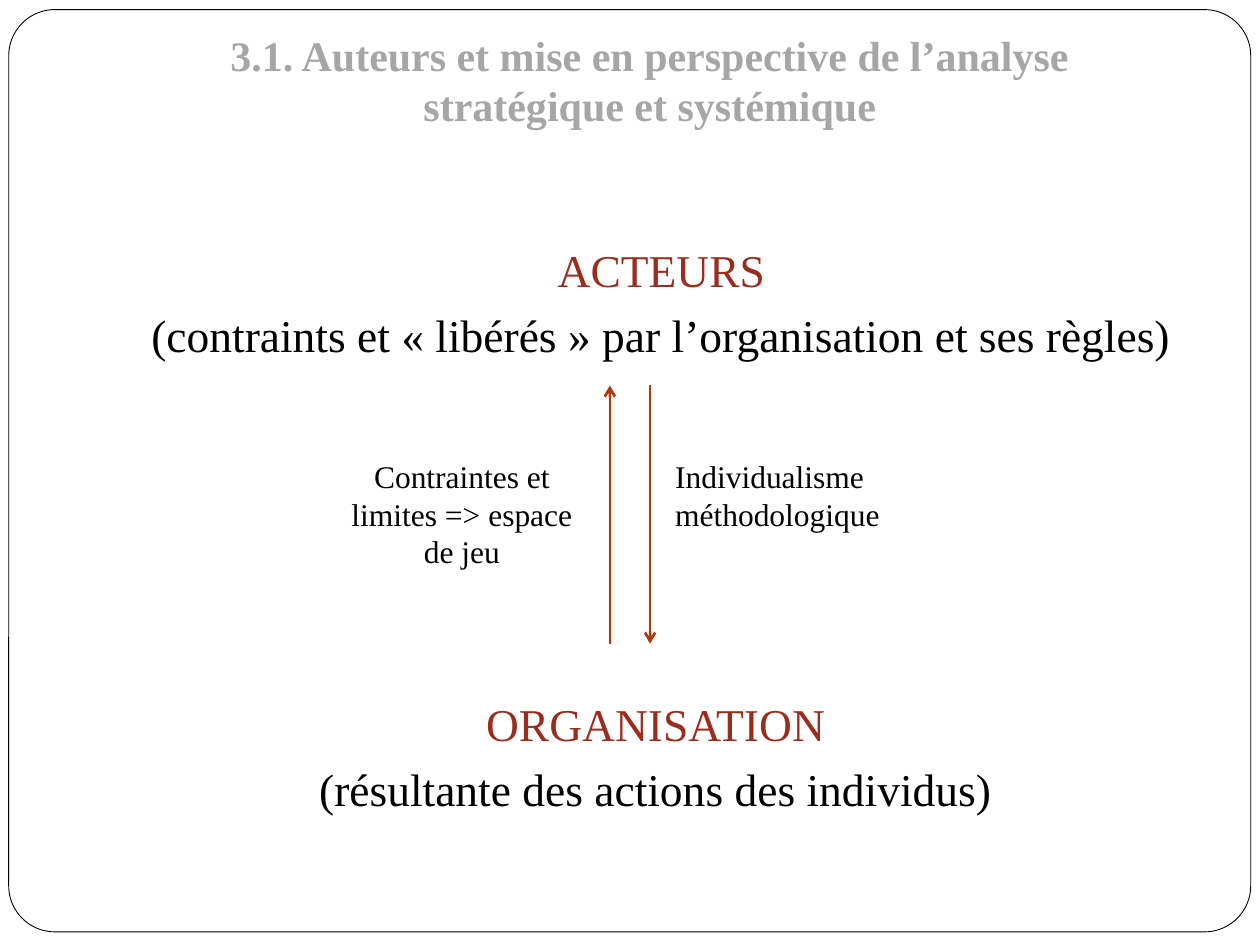
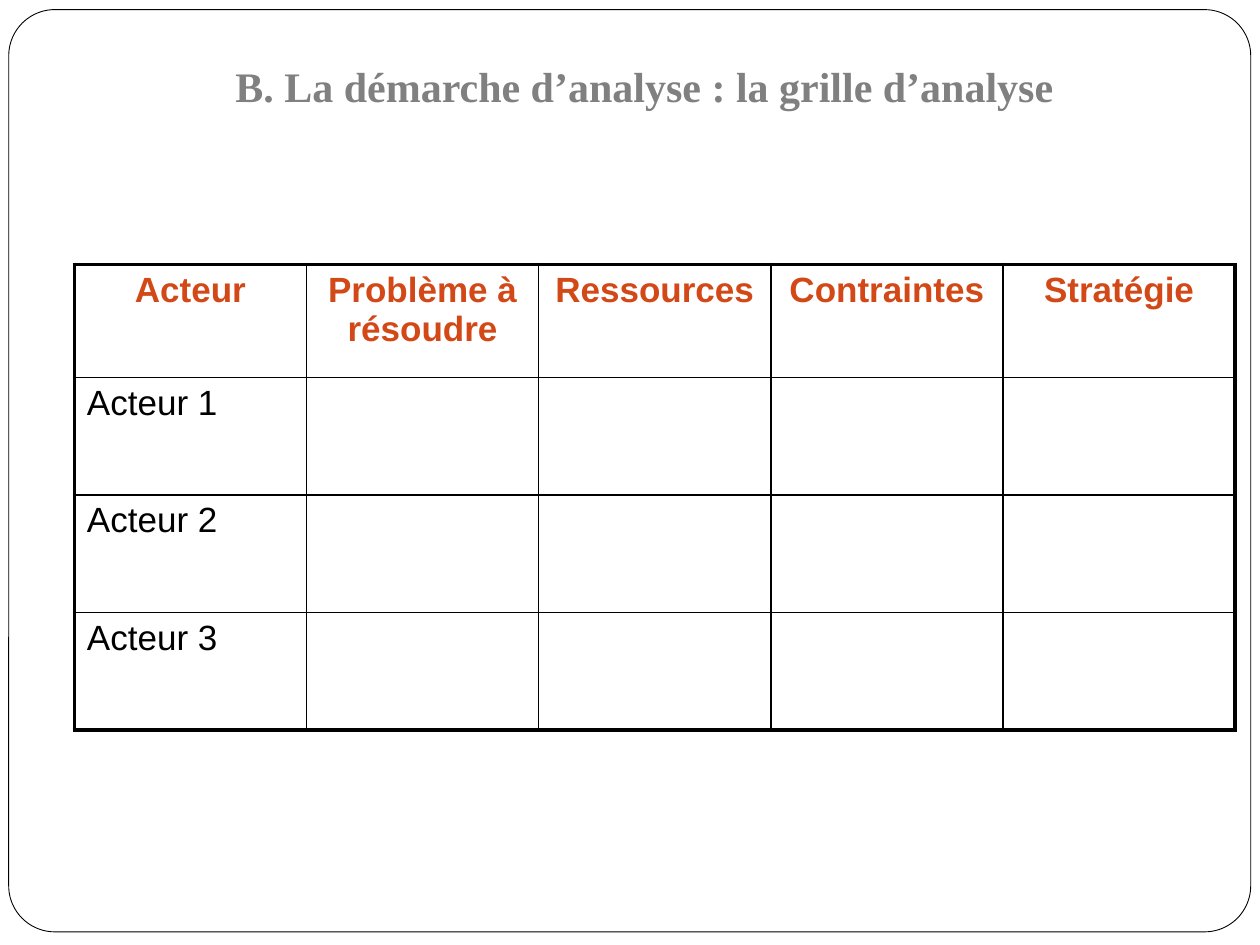
from lxml import etree
from pptx import Presentation
from pptx.dml.color import RGBColor
from pptx.enum.shapes import MSO_CONNECTOR, MSO_SHAPE
from pptx.enum.text import MSO_ANCHOR, PP_ALIGN
from pptx.oxml.ns import qn
from pptx.util import Pt

STRAIGHT, ROUNDED = MSO_CONNECTOR.STRAIGHT, MSO_SHAPE.ROUNDED_RECTANGLE
LEFT, CENTER = PP_ALIGN.LEFT, PP_ALIGN.CENTER
TOP, BOTTOM = MSO_ANCHOR.TOP, MSO_ANCHOR.BOTTOM

WHITE = RGBColor(0xFF, 0xFF, 0xFF)
BLACK = RGBColor(0x00, 0x00, 0x00)
LIGHT_GREY = RGBColor(0xA6, 0xA6, 0xA6)
GREY = RGBColor(0x80, 0x80, 0x80)
BRICK = RGBColor(0x9B, 0x2D, 0x1F)
RUST = RGBColor(0xB1, 0x36, 0x0B)
ORANGE = RGBColor(0xD3, 0x48, 0x17)

SERIF, SANS = "Times New Roman", "Arial"
SLIDE_WIDTH, SLIDE_HEIGHT = 720, 540
THIN, THICK = 1, 2.25

HEADINGS = ["Acteur", "Problème à résoudre", "Ressources", "Contraintes", "Stratégie"]
ACTORS = ["Acteur 1", "Acteur 2", "Acteur 3"]


def style(para, size, color, align=LEFT, name=SERIF, bold=False):
    para.alignment = align
    para.font.name, para.font.size, para.font.bold = name, Pt(size), bold
    para.font.color.rgb = color


def add_text_box(page, box, anchor=TOP):
    frame = page.shapes.add_textbox(*map(Pt, box)).text_frame
    frame.word_wrap = True
    frame.vertical_anchor = anchor
    return frame


def add_label(page, box, text, align):
    para = add_text_box(page, box).paragraphs[0]
    para.text = text
    style(para, 18, BLACK, align)


def add_page(deck, title, title_top, title_color):
    """Add a blank slide with the rounded frame and its title."""
    page = deck.slides.add_slide(deck.slide_layouts[6])
    frame = page.shapes.add_shape(ROUNDED, Pt(5), Pt(5.5), Pt(709.7), Pt(527))
    frame.adjustments[0] = 0.05
    frame.shadow.inherit = False
    frame.fill.solid()
    frame.fill.fore_color.rgb = WHITE
    frame.line.color.rgb = BLACK
    frame.line.width = Pt(0.5)

    text_frame = add_text_box(page, (65.3, title_top, 612, 55.5), BOTTOM)
    text_frame.margin_bottom = Pt(7.2)
    para = text_frame.paragraphs[0]
    para.text = title
    style(para, 24, title_color, CENTER, bold=True)
    return page


def add_arrow(page, x, start, end):
    arrow = page.shapes.add_connector(STRAIGHT, Pt(x), Pt(start), Pt(x), Pt(end))
    arrow.line.color.rgb = RUST
    arrow.line.width = Pt(1.5)
    properties = arrow.element.spPr
    etree.SubElement(properties.find(qn("a:ln")), qn("a:tailEnd"), type="arrow")
    etree.SubElement(properties, qn("a:effectLst"))


def add_levels(page, box):
    """Write the two levels of analysis, leaving room for the arrows between them."""
    frame = add_text_box(page, box)
    frame.margin_top = Pt(38.5)
    lines = [
        ("ACTEURS", BRICK, 0),
        ("(contraints et «\u00a0libérés\u00a0» par l’organisation et ses règles)", BLACK, 5.8),
        ("ORGANISATION ", BRICK, 191),
        ("(résultante des actions des individus) ", BLACK, 5.8),
    ]
    for index, (text, color, gap) in enumerate(lines):
        para = frame.add_paragraph() if index else frame.paragraphs[0]
        para.text = text
        para.space_before = Pt(gap)
        style(para, 26, color, CENTER)


def add_interactions(page, box):
    """Draw the opposite arrows on the box's sides, each with its label outside."""
    left, top, width, height = box
    right, bottom = left + width, top + height
    label_width, label_top = 147.5, top + 37.2
    add_arrow(page, right, top, bottom)
    add_label(page, (right + 7.2, label_top, label_width, 51),
              "Individualisme méthodologique", LEFT)
    add_arrow(page, left, bottom, top)
    add_label(page, (left - 10.8 - label_width, label_top, label_width, 73),
              "Contraintes et limites => espace de jeu", CENTER)


def set_borders(cell, widths):
    properties = cell._tc.get_or_add_tcPr()
    for side, width in zip("LRTB", widths):
        line = etree.SubElement(properties, qn(f"a:ln{side}"), w=str(Pt(width)))
        fill = etree.SubElement(line, qn("a:solidFill"))
        etree.SubElement(fill, qn("a:srgbClr"), val=str(BLACK))


def add_grid(page, box):
    """Build the analysis grid: headings on top, one row for each actor."""
    rows = [HEADINGS] + [[actor] + [""] * (len(HEADINGS) - 1) for actor in ACTORS]
    last_row, last_column = len(rows) - 1, len(HEADINGS) - 1
    table = page.shapes.add_table(len(rows), len(HEADINGS), *map(Pt, box)).table
    table.first_row = table.horz_banding = False
    for column in table.columns:
        column.width = Pt(box[2] / len(HEADINGS))
    for row, height in zip(table.rows, (64.6, 67.2, 67.2, 67.2)):
        row.height = Pt(height)

    for r, texts in enumerate(rows):
        for c, text in enumerate(texts):
            cell = table.cell(r, c)
            outer = (c == 0, c == last_column, r == 0, r == last_row)
            set_borders(cell, [THICK if edge else THIN for edge in outer])
            cell.fill.background()
            cell.text = text
            para = cell.text_frame.paragraphs[0]
            if r == 0:
                style(para, 20, ORANGE, CENTER, SANS, bold=True)
            else:
                style(para, 20, BLACK, name=SANS)


def main():
    deck = Presentation()
    deck.slide_width, deck.slide_height = Pt(SLIDE_WIDTH), Pt(SLIDE_HEIGHT)

    page = add_page(
        deck, "3.1. Auteurs et mise en perspective de l’analyse stratégique et systémique",
        26.2, LIGHT_GREY)
    add_levels(page, (72, 100, 612, 408))
    add_interactions(page, (348.5, 220.3, 23, 147.5))

    page = add_page(deck, "B. La démarche d’analyse : la grille d’analyse ", 15, GREY)
    add_grid(page, (42.5, 151, 663.4, 266.2))

    deck.save("out.pptx")


if __name__ == "__main__":
    main()
